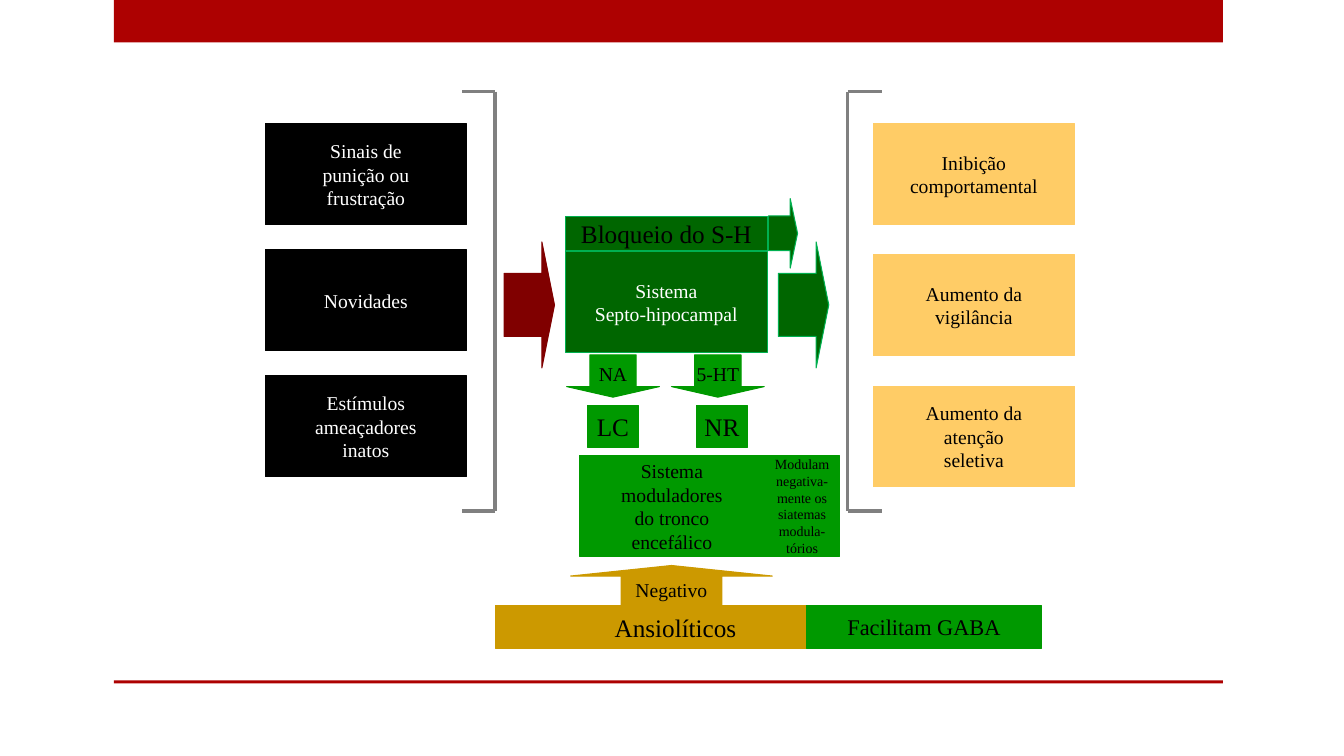
from pptx import Presentation
from pptx.dml.color import RGBColor
from pptx.enum.shapes import MSO_CONNECTOR, MSO_SHAPE
from pptx.enum.text import MSO_ANCHOR, PP_ALIGN
from pptx.oxml.ns import qn
from pptx.util import Inches, Pt
from lxml import etree

RECT = MSO_SHAPE.RECTANGLE
RIGHT = MSO_SHAPE.RIGHT_ARROW
DOWN = MSO_SHAPE.DOWN_ARROW
UP = MSO_SHAPE.UP_ARROW
LINE = MSO_CONNECTOR.STRAIGHT
MIDDLE = MSO_ANCHOR.MIDDLE
CENTER = PP_ALIGN.CENTER

RED = RGBColor(0xAD, 0x01, 0x01)
MAROON = RGBColor(0x80, 0x00, 0x00)
BLACK = RGBColor(0x00, 0x00, 0x00)
WHITE = RGBColor(0xFF, 0xFF, 0xFF)
GRAY = RGBColor(0x80, 0x80, 0x80)
FOREST = RGBColor(0x00, 0x66, 0x00)
EDGE = RGBColor(0x00, 0xB0, 0x50)
GREEN = RGBColor(0x00, 0x99, 0x00)
SAND = RGBColor(0xFF, 0xCC, 0x66)
GOLD = RGBColor(0xCC, 0x99, 0x00)
FONT = "Times New Roman"


def block(slide, kind, box, fill, text="", size=14, color=BLACK, edge=None):
    """Add a filled shape with centred text; box is left, top, width, height."""
    shape = slide.shapes.add_shape(kind, *map(Inches, box))
    shape.shadow.inherit = False
    shape.fill.solid()
    shape.fill.fore_color.rgb = fill
    shape.line.color.rgb = edge or fill
    shape.line.width = Pt(0.75)
    if kind != RECT:
        shape.adjustments[0] = 0.5
        shape.adjustments[1] = 0.25
    if text:
        frame = shape.text_frame
        frame.text = text
        frame.word_wrap = False
        frame.vertical_anchor = MIDDLE
        for para in frame.paragraphs:
            para.alignment = CENTER
            for run in para.runs:
                run.font.name = FONT
                run.font.size = Pt(size)
                run.font.color.rgb = color
    return shape


def frame_bars(slide, left, width):
    """Red band on top and thin rule at the foot."""
    for top, height in ((0, 0.42), (6.75, 0.03)):
        bar = block(slide, RECT, (left, top, width, height), RED)
        bar.line.fill.background()


def stack(slide, left, top, step, fill, color, labels):
    """Column of equal boxes."""
    for row, label in enumerate(labels):
        box = (left, top + row * step, 2, 1)
        block(slide, RECT, box, fill, label, color=color)


def bracket(slide, x, top, bottom, tick):
    """Square bracket whose ticks point by the signed length."""
    tip = x + tick
    for ends in ((x, top, x, bottom), (x, top, tip, top), (x, bottom, tip, bottom)):
        line = slide.shapes.add_connector(LINE, *map(Inches, ends))
        line.line.color.rgb = GRAY
        line.line.width = Pt(2.25)
        etree.SubElement(line.element.spPr, qn("a:effectLst"))


def core(slide, left, top):
    """Septo-hippocampal system, its block and the arrows around it."""
    block(slide, RIGHT, (left - 0.61, top + 0.25, 0.5, 1.25), MAROON)
    block(slide, RECT, (left, top + 0.35, 2, 1), FOREST,
          "Sistema\nSepto-hipocampal", color=WHITE, edge=EDGE)
    block(slide, RIGHT, (left + 2.11, top + 0.25, 0.5, 1.25), FOREST, edge=EDGE)
    block(slide, RECT, (left, top, 2, 0.34), FOREST, "Bloqueio do S-H", 18, edge=EDGE)
    block(slide, RIGHT, (left + 2.01, top - 0.18, 0.29, 0.69), FOREST, edge=EDGE)


def stem(slide, left, top):
    """Brain stem modulators with their two pathways."""
    paths = ((0, "NA", 0.21, "LC"), (1.04, "5-HT", 1.29, "NR"))
    for arrow, signal, nucleus, name in paths:
        block(slide, DOWN, (left + arrow, top, 0.92, 0.42), GREEN, signal)
        block(slide, RECT, (left + nucleus, top + 0.5, 0.5, 0.42), GREEN, name, 18)
    block(slide, RECT, (left + 0.13, top + 1, 1.83, 1), GREEN,
          "Sistema\nmoduladores\ndo tronco\nencefálico")
    block(slide, RECT, (left + 1.96, top + 1, 0.75, 1), GREEN,
          "Modulam\nnegativa-\nmente os\nsiatemas\nmodula-\ntórios", 10)


def drugs(slide, left, top):
    """Anxiolytics and their negative effect."""
    block(slide, RECT, (left, top + 0.4, 3.58, 0.42), GOLD, "Ansiolíticos", 18)
    block(slide, UP, (left + 0.75, top, 2, 0.42), GOLD, "Negativo")
    block(slide, RECT, (left + 3.09, top + 0.4, 2.33, 0.42), GREEN, "Facilitam GABA", 16)


def main():
    deck = Presentation()
    deck.slide_width = Inches(13.33)
    deck.slide_height = Inches(7.5)
    slide = deck.slides.add_slide(deck.slide_layouts[6])

    frame_bars(slide, 1.13, 11)
    # Inputs on the left, responses on the right
    stack(slide, 2.63, 1.23, 1.25, BLACK, WHITE,
          ("Sinais de\npunição ou\nfrustração", "Novidades",
           "Estímulos\nameaçadores\ninatos"))
    bracket(slide, 4.91, 0.91, 5.07, -0.33)
    stack(slide, 8.66, 1.23, 1.3, SAND, BLACK,
          ("Inibição\ncomportamental", "Aumento da\nvigilância",
           "Aumento da\natenção\nseletiva"))
    bracket(slide, 8.41, 0.91, 5.07, 0.34)
    # Central chain, from the system down to the drugs
    core(slide, 5.61, 2.15)
    drugs(slide, 4.91, 5.61)
    stem(slide, 5.62, 3.52)

    deck.save("out.pptx")


if __name__ == "__main__":
    main()
